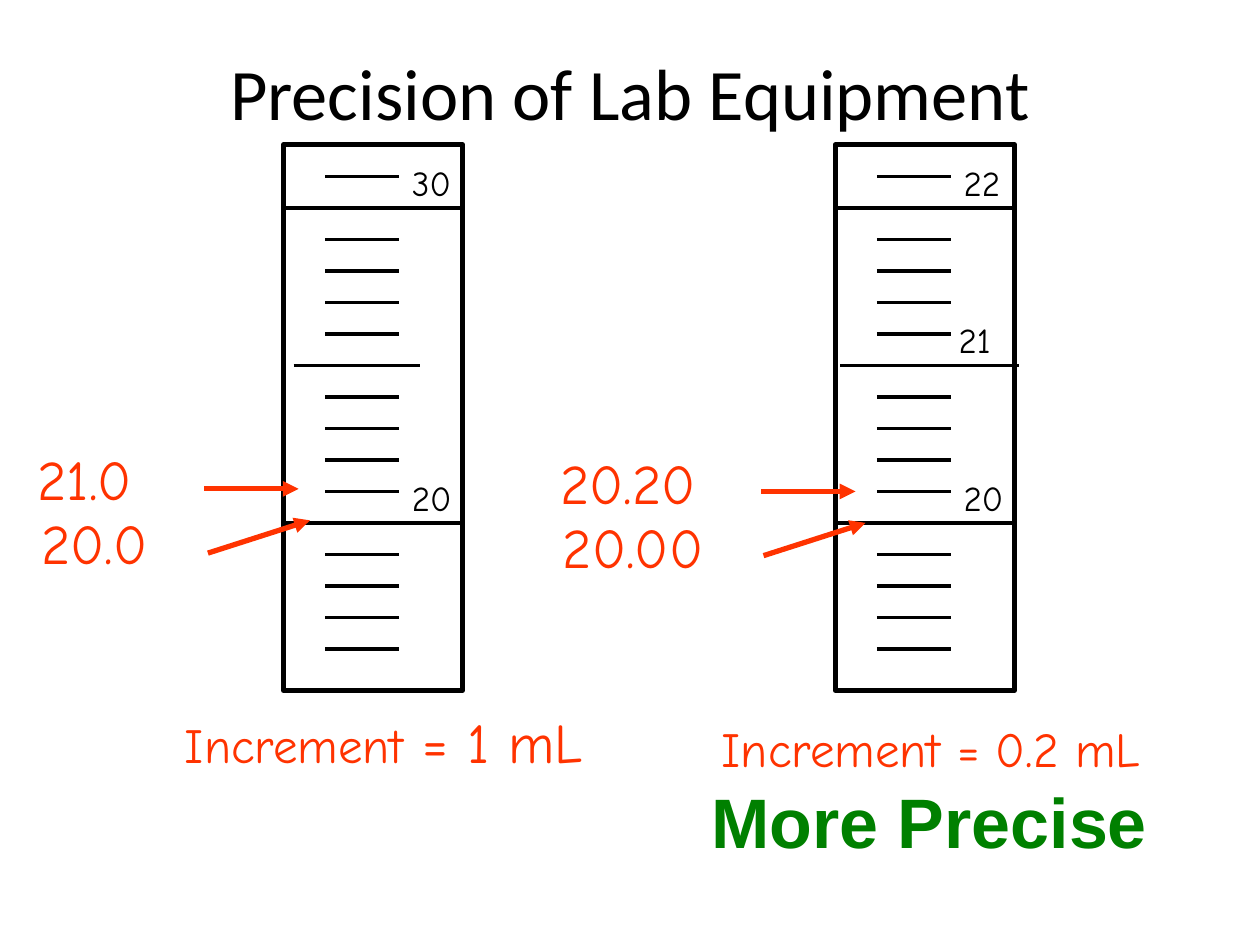
from dataclasses import dataclass

from lxml.etree import SubElement
from pptx import Presentation
from pptx.dml.color import RGBColor
from pptx.enum.shapes import MSO_CONNECTOR, MSO_SHAPE
from pptx.enum.text import MSO_ANCHOR, MSO_AUTO_SIZE, PP_ALIGN
from pptx.oxml.ns import qn
from pptx.shapes.autoshape import Shape
from pptx.slide import Slide
from pptx.util import Inches, Pt

BLACK = RGBColor(0x00, 0x00, 0x00)
WHITE = RGBColor(0xFF, 0xFF, 0xFF)
ORANGE = RGBColor(0xFF, 0x33, 0x00)
GREEN = RGBColor(0x00, 0x80, 0x00)
HAND_FONT = "Comic Neue"

# Scale shared by both cylinders
TOP, WIDTH, HEIGHT = 1.15, 1.42, 4.33
FIRST_MARK, MARK_GAP, MARK_COUNT = 1.4, 0.25, 16
FULL_MARKS, MIDDLE_MARK = (1, 11), 6
SHORT_START, SHORT_END = 0.33, 0.92


@dataclass(frozen=True)
class Label:
    text: str
    left: float
    top: float
    width: float
    height: float
    size: float
    color: RGBColor = BLACK


@dataclass(frozen=True)
class Arrow:
    start: tuple[float, float]
    end: tuple[float, float]


@dataclass(frozen=True)
class Cylinder:
    left: float
    middle_start: float
    middle_end: float
    labels: tuple[Label, ...]
    arrows: tuple[Arrow, ...]


CYLINDERS = (
    Cylinder(2.25, 2.33, 3.33, (
        Label("20", 3.17, 3.73, 0.54, 0.43, 20),
        Label("30", 3.17, 1.23, 0.54, 0.43, 20),
        Label("21.0", 0.2, 3.48, 1.05, 0.63, 32, ORANGE),
        Label("20.0", 0.23, 3.99, 1.12, 0.63, 32, ORANGE),
    ), (
        Arrow((1.62, 3.88), (2.37, 3.88)),
        Arrow((1.65, 4.39), (2.46, 4.13)),
    )),
    Cylinder(6.63, 6.67, 8.09, (
        Label("20", 7.55, 3.73, 0.54, 0.43, 20),
        Label("22", 7.55, 1.23, 0.54, 0.43, 20),
        Label("21", 7.51, 2.48, 0.5, 0.43, 20),
        Label("20.20", 4.35, 3.51, 1.4, 0.63, 32, ORANGE),
        Label("20.00", 4.37, 4.02, 1.4, 0.63, 32, ORANGE),
    ), (
        Arrow((6.04, 3.9), (6.79, 3.9)),
        Arrow((6.06, 4.41), (6.87, 4.15)),
    )),
)


def add_line(page: Slide, start: tuple[float, float], end: tuple[float, float],
             color: RGBColor = BLACK, weight: float = 2, arrow: bool = False) -> None:
    line = page.shapes.add_connector(
        MSO_CONNECTOR.STRAIGHT, *(Inches(value) for value in (*start, *end)))
    line.line.color.rgb = color
    line.line.width = Pt(weight)
    if arrow:
        SubElement(line.line._get_or_add_ln(), qn("a:tailEnd"), type="triangle")
    SubElement(line._element.spPr, qn("a:effectLst"))


def add_rectangle(page: Slide, left: float, top: float,
                  width: float, height: float) -> Shape:
    box = page.shapes.add_shape(MSO_SHAPE.RECTANGLE, Inches(left), Inches(top),
                                Inches(width), Inches(height))
    box.shadow.inherit = False
    box.fill.solid()
    box.fill.fore_color.rgb = WHITE
    return box


def write_text(box: Shape, label: Label, font: str = HAND_FONT,
               centred: bool = False, bold: bool = False) -> None:
    para = box.text_frame.paragraphs[0]
    para.text = label.text
    para.alignment = PP_ALIGN.CENTER if centred else PP_ALIGN.LEFT
    span = para.runs[0]
    span.font.name = font
    span.font.size = Pt(label.size)
    span.font.bold = bold
    span.font.color.rgb = label.color


def add_label(page: Slide, label: Label, font: str = HAND_FONT,
              wrap: bool = False, centred: bool = False) -> Shape:
    box = page.shapes.add_textbox(Inches(label.left), Inches(label.top),
                                  Inches(label.width), Inches(label.height))
    box.text_frame.word_wrap = wrap
    box.text_frame.auto_size = MSO_AUTO_SIZE.NONE if centred else MSO_AUTO_SIZE.SHAPE_TO_FIT_TEXT
    write_text(box, label, font, centred)
    return box


def add_cylinder(page: Slide, cylinder: Cylinder) -> None:
    left = cylinder.left
    outline = add_rectangle(page, left, TOP, WIDTH, HEIGHT)
    outline.line.color.rgb = BLACK
    outline.line.width = Pt(3)
    for index in range(MARK_COUNT):
        height = FIRST_MARK + index * MARK_GAP
        if index in FULL_MARKS:
            start, end = left, left + WIDTH
        elif index == MIDDLE_MARK:
            start, end = cylinder.middle_start, cylinder.middle_end
        else:
            start, end = left + SHORT_START, left + SHORT_END
        add_line(page, (start, height), (end, height))
    for label in cylinder.labels:
        add_label(page, label)
    for arrow in cylinder.arrows:
        add_line(page, arrow.start, arrow.end, ORANGE, 3, arrow=True)


def main() -> None:
    deck = Presentation()
    deck.slide_width, deck.slide_height = Inches(10), Inches(7.5)
    page = deck.slides.add_slide(deck.slide_layouts[6])

    # Title
    title = add_label(page, Label("Precision of Lab Equipment", 0.5, 0.3, 9, 0.85, 41.4),
                      "Calibri", wrap=True, centred=True)
    title.text_frame.vertical_anchor = MSO_ANCHOR.MIDDLE

    # Cylinders with their scales and readings
    for cylinder in CYLINDERS:
        add_cylinder(page, cylinder)

    # Increments
    coarse = add_label(page, Label("Increment", 1.37, 5.57, 3.54, 0.63, 28, ORANGE))
    amount = coarse.text_frame.paragraphs[0].add_run()
    amount.text = " = 1 mL"
    amount.font.name = HAND_FONT
    amount.font.size = Pt(32)
    amount.font.color.rgb = ORANGE
    add_label(page, Label("Increment = 0.2 mL", 5.63, 5.65, 4.25, 0.57, 28, ORANGE), wrap=True)

    # Verdict
    verdict = Label("More Precise", 5.54, 6.21, 3.67, 0.61, 40, GREEN)
    banner = add_rectangle(page, verdict.left, verdict.top, verdict.width, verdict.height)
    banner.line.fill.background()
    banner.text_frame.word_wrap = False
    write_text(banner, verdict, "Arial", centred=True, bold=True)

    deck.save("out.pptx")


if __name__ == "__main__":
    main()
